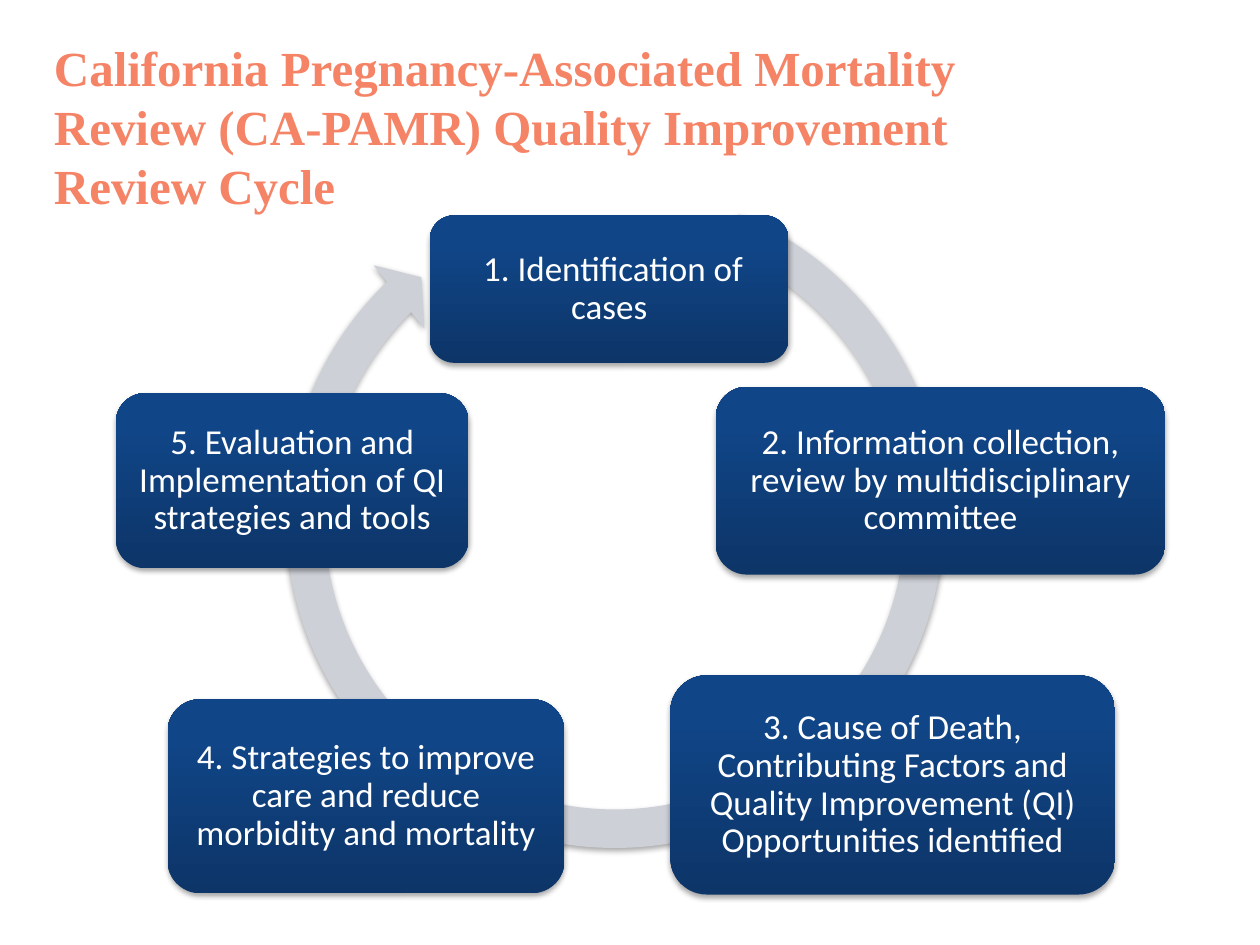
from copy import deepcopy

from lxml import etree
from pptx import Presentation
from pptx.dml.color import RGBColor
from pptx.enum.shapes import MSO_SHAPE
from pptx.enum.text import MSO_ANCHOR, MSO_AUTO_SIZE, PP_ALIGN
from pptx.oxml.ns import qn
from pptx.util import Inches, Pt

ROUNDED = MSO_SHAPE.ROUNDED_RECTANGLE
CIRCULAR_ARROW = MSO_SHAPE.CIRCULAR_ARROW
MIDDLE = MSO_ANCHOR.MIDDLE
CENTER = PP_ALIGN.CENTER
GROW = MSO_AUTO_SIZE.SHAPE_TO_FIT_TEXT

TITLE = ("California Pregnancy-Associated Mortality Review (CA-PAMR) "
         "Quality Improvement Review Cycle")
STEPS = [
    (" 1. Identification of cases", (3.41, 1.71, 2.85, 1.17)),
    ("2. Information collection, review by multidisciplinary committee",
     (5.68, 3.07, 3.57, 1.49)),
    ("3. Cause of Death, Contributing Factors and Quality Improvement (QI) "
     "Opportunities identified", (5.32, 5.36, 3.53, 1.74)),
    ("4. Strategies to improve care and reduce morbidity and mortality",
     (1.33, 5.55, 3.15, 1.54)),
    ("5. Evaluation and Implementation of QI strategies and tools",
     (0.92, 3.12, 2.8, 1.39)),
]
STEP_GRADIENT = [(0, "0D3568"), (0.8, "104587"), (1, "0E458A")]


def color(value):
    return RGBColor.from_string(value)


def add_span(para, text, font, size, hex_color, bold=False):
    span = para.add_run()
    span.text = text
    span.font.name = font
    span.font.size = Pt(size)
    span.font.bold = bold
    span.font.color.rgb = color(hex_color)


def add_shadow(shape):
    """Give the shape a soft shadow straight below it."""
    shape.shadow.inherit = False
    effects = shape._element.spPr.find(qn("a:effectLst"))
    shadow = etree.SubElement(effects, qn("a:outerShdw"), blurRad="40000",
                              dist="23000", dir="5400000", rotWithShape="0")
    black = etree.SubElement(shadow, qn("a:srgbClr"), val="000000")
    etree.SubElement(black, qn("a:alpha"), val="35000")


def fill_gradient(shape, colors):
    """Fill from bottom to top with three colour stops."""
    shape.fill.gradient()
    shape.fill.gradient_angle = 90
    stop_list = shape._element.spPr.find(qn("a:gradFill")).find(qn("a:gsLst"))
    stop_list.append(deepcopy(stop_list[-1]))
    for stop, (position, value) in zip(shape.fill.gradient_stops, colors):
        stop.position = position
        stop.color.rgb = color(value)


def add_cycle_shape(group, kind, box):
    shape = group.shapes.add_shape(kind, *map(Inches, box))
    shape.line.fill.background()
    add_shadow(shape)
    return shape


def add_title(page, box):
    title = page.shapes.add_textbox(*map(Inches, box))
    frame = title.text_frame
    frame.word_wrap = True
    frame.auto_size = GROW
    add_span(frame.paragraphs[0], TITLE, "Times New Roman", 28, "F58466", True)


def add_ring(group, box):
    ring = add_cycle_shape(group, CIRCULAR_ARROW, box)
    ring.fill.solid()
    ring.fill.fore_color.rgb = color("CDD0D7")
    for index, value in enumerate((0.055, 3.307, 135.497, 175.252, 0.058)):
        ring.adjustments[index] = value


def add_step(group, text, box):
    step = add_cycle_shape(group, ROUNDED, box)
    fill_gradient(step, STEP_GRADIENT)
    frame = step.text_frame
    frame.word_wrap = True
    frame.vertical_anchor = MIDDLE
    frame.margin_left = frame.margin_right = Inches(0.08)
    frame.margin_top = frame.margin_bottom = Inches(0.08)
    para = frame.paragraphs[0]
    para.alignment = CENTER
    para.line_spacing = 0.9
    add_span(para, text, "Calibri", 20, "FFFFFF")


def add_cycle(page, ring_box):
    group = page.shapes.add_group_shape()
    add_ring(group, ring_box)
    for text, box in STEPS:
        add_step(group, text, box)


def main():
    deck = Presentation()
    deck.slide_width, deck.slide_height = Inches(10), Inches(7.5)
    page = deck.slides.add_slide(deck.slide_layouts[6])
    add_title(page, (0.33, 0.25, 7.72, 1.51))
    add_cycle(page, (2.1, 1.34, 5.56, 5.56))
    deck.save("out.pptx")


if __name__ == "__main__":
    main()
